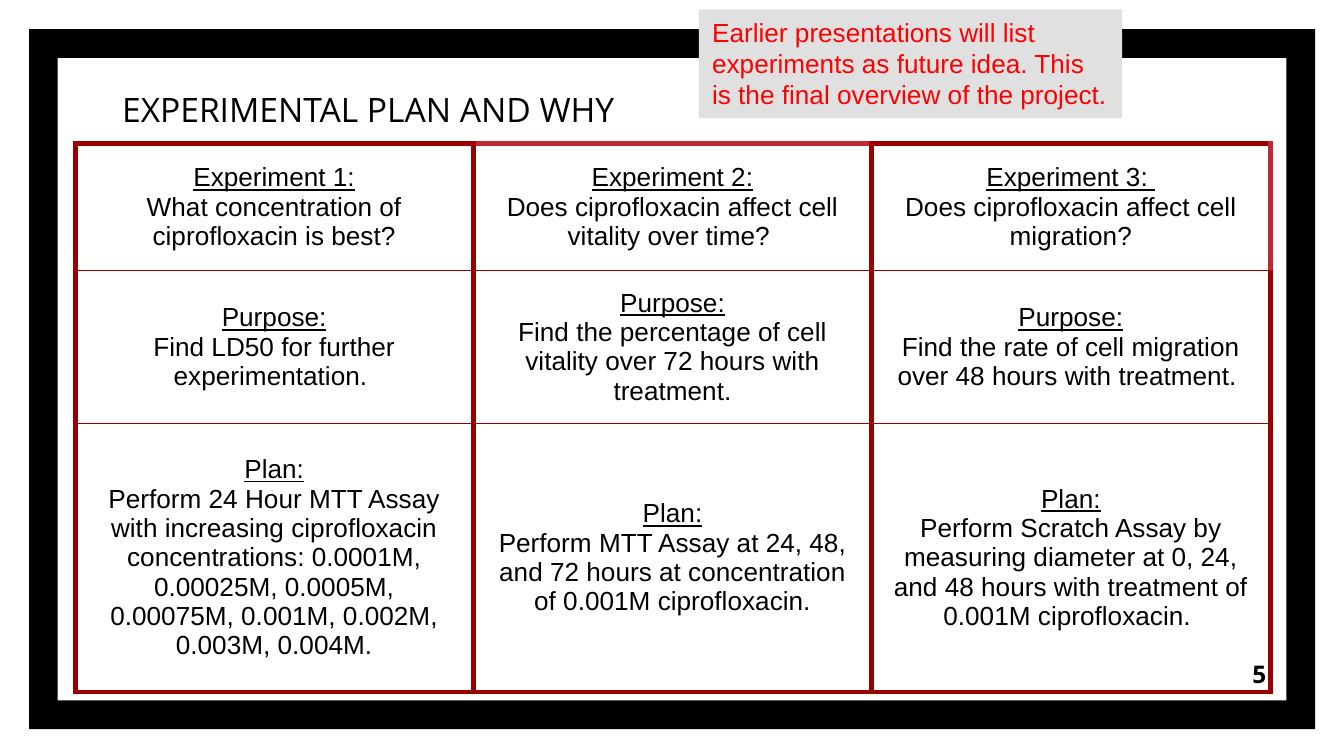
"""Build the experimental plan slide: framed page, title, three-experiment table and a callout."""
import pptx
import pptx.dml.color
import pptx.enum.shapes
import pptx.enum.text
import pptx.oxml
import pptx.oxml.ns
import pptx.util
from dataclasses import dataclass

Pt = pptx.util.Pt
RGB = pptx.dml.color.RGBColor.from_string
SHAPE = pptx.enum.shapes.MSO_SHAPE
ALIGN = pptx.enum.text.PP_ALIGN
MIDDLE = pptx.enum.text.MSO_ANCHOR.MIDDLE


@dataclass(frozen=True)
class Theme:
    ink: str = "000000"
    rule: str = "990000"
    accent_rule: str = "BD2A35"
    note: str = "FF0000"
    note_fill: str = "E0E0E0"
    heading_font: str = "Open Sans"
    body_font: str = "Arial"
    title_size: int = 18
    body_size: int = 14
    number_size: int = 13
    thick: float = 3
    thin: float = 0.75
    inset: float = 7.2


theme = Theme()


def write(paragraph, text, face, size, color, align=ALIGN.LEFT):
    paragraph.text = text
    paragraph.alignment = align
    paragraph.font.name = face
    paragraph.font.size = Pt(size)
    paragraph.font.color.rgb = RGB(color)


def set_border(cell, side, color, width):
    properties = cell._tc.get_or_add_tcPr()
    properties.append(pptx.oxml.parse_xml(
        f'<a:{side} {pptx.oxml.ns.nsdecls("a")} w="{Pt(width)}"><a:solidFill>'
        f'<a:srgbClr val="{color}"/></a:solidFill></a:{side}>'))


deck = pptx.Presentation()
deck.slide_width, deck.slide_height = Pt(720), Pt(405)
slide = deck.slides.add_slide(deck.slide_layouts[6])

frame = slide.shapes.add_shape(SHAPE.FRAME, Pt(15.6), Pt(15.6), Pt(689), Pt(375))
frame.adjustments[0] = 0.041
frame.shadow.inherit = False
frame.fill.solid()
frame.fill.fore_color.rgb = RGB(theme.ink)
frame.line.fill.background()

labels = [
    ("5", 642.2, 345.6, 43.2, 31, theme.number_size, ALIGN.RIGHT),
    ("EXPERIMENTAL PLAN AND WHY", 58.3, 40.3, 597, 36, theme.title_size, ALIGN.LEFT),
]
for text, left, top, width, height, size, align in labels:
    label = slide.shapes.add_textbox(Pt(left), Pt(top), Pt(width), Pt(height)).text_frame
    label.word_wrap = True
    label.margin_left = label.margin_right = Pt(theme.inset)
    label.margin_top = label.margin_bottom = Pt(theme.inset)
    write(label.paragraphs[0], text, theme.heading_font, size, theme.ink, align)
    if align == ALIGN.RIGHT:
        label.vertical_anchor = MIDDLE
        label.paragraphs[0].font.bold = True

plan_rows = [
    [("Experiment 1:", "What concentration of ciprofloxacin is best?"),
     ("Experiment 2:", "Does ciprofloxacin affect cell vitality over time? "),
     ("Experiment 3: ", "Does ciprofloxacin affect cell migration?")],
    [("Purpose:", "Find LD50 for further experimentation. "),
     ("Purpose:", "Find the percentage of cell vitality over 72 hours with treatment."),
     ("Purpose:", "Find the rate of cell migration over 48 hours with treatment. ")],
    [("Plan:", "Perform 24 Hour MTT Assay with increasing ciprofloxacin concentrations: "
      "0.0001M, 0.00025M, 0.0005M, 0.00075M, 0.001M, 0.002M, 0.003M, 0.004M."),
     ("Plan:", "Perform MTT Assay at 24, 48, and 72 hours at concentration of 0.001M ciprofloxacin."),
     ("Plan:", "Perform Scratch Assay by measuring diameter at 0, 24, and 48 hours "
      "with treatment of 0.001M ciprofloxacin. ")],
]
row_heights = [68, 82, 143.8]
column_width = 213.4

plan = slide.shapes.add_table(3, 3, Pt(40.2), Pt(77), Pt(3 * column_width),
                              Pt(sum(row_heights))).table
plan.first_row = plan.horz_banding = False
for column in plan.columns:
    column.width = Pt(column_width)
for r, (height, contents) in enumerate(zip(row_heights, plan_rows)):
    plan.rows[r].height = Pt(height)
    for c, (heading, detail) in enumerate(contents):
        cell = plan.cell(r, c)
        cell.vertical_anchor = MIDDLE
        cell.margin_left = cell.margin_right = Pt(theme.inset)
        cell.margin_top = cell.margin_bottom = Pt(theme.inset)
        cell.text_frame.add_paragraph()
        for paragraph, text in zip(cell.text_frame.paragraphs, (heading, detail)):
            write(paragraph, text, theme.body_font, theme.body_size, theme.ink, ALIGN.CENTER)
        cell.text_frame.paragraphs[0].font.underline = True
        set_border(cell, "lnL", theme.rule, theme.thick)
        set_border(cell, "lnR", theme.accent_rule if (r, c) == (0, 2) else theme.rule, theme.thick)
        set_border(cell, "lnT", theme.accent_rule if (r, c) == (0, 1) else theme.rule,
                   theme.thick if r == 0 else theme.thin)
        set_border(cell, "lnB", theme.rule, theme.thick if r == 2 else theme.thin)
        cell.fill.background()

callout = slide.shapes.add_shape(SHAPE.RECTANGLE, Pt(374.4), Pt(5), Pt(226.8), Pt(58.3))
callout.shadow.inherit = False
callout.fill.solid()
callout.fill.fore_color.rgb = RGB(theme.note_fill)
callout.line.fill.background()
callout.text_frame.word_wrap = True
callout.text_frame.vertical_anchor = pptx.enum.text.MSO_ANCHOR.TOP
write(callout.text_frame.paragraphs[0],
      "Earlier presentations will list experiments as future idea. "
      "This is the final overview of the project.",
      theme.body_font, theme.body_size, theme.note)

deck.save("out.pptx")
